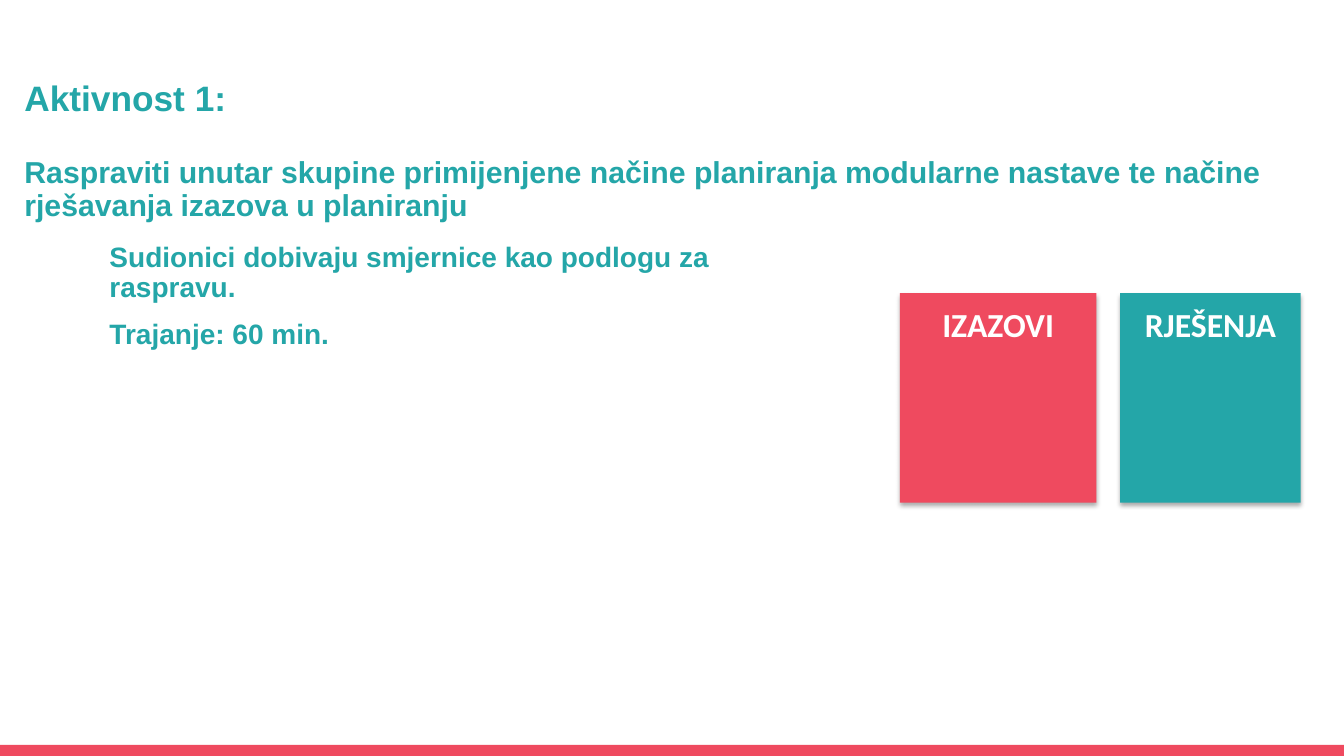
from lxml import etree
from pptx import Presentation
from pptx.dml.color import RGBColor
from pptx.enum.shapes import MSO_SHAPE
from pptx.enum.text import MSO_ANCHOR, MSO_AUTO_SIZE, PP_ALIGN
from pptx.oxml import parse_xml
from pptx.util import Cm, Pt

RECTANGLE = MSO_SHAPE.RECTANGLE
TOP = MSO_ANCHOR.TOP
NO_AUTOFIT = MSO_AUTO_SIZE.NONE
LEFT, CENTER = PP_ALIGN.LEFT, PP_ALIGN.CENTER

RED = RGBColor(0xEF, 0x4A, 0x5F)
TEAL = RGBColor(0x24, 0xA6, 0xA8)
WHITE = RGBColor(0xFF, 0xFF, 0xFF)

SOFT_SHADOW = (
    '<a:effectLst xmlns:a="http://schemas.openxmlformats.org/drawingml/2006/main">'
    '<a:outerShdw blurRad="44450" dist="27940" dir="5400000" algn="ctr" rotWithShape="0">'
    '<a:srgbClr val="000000"><a:alpha val="32000"/></a:srgbClr>'
    '</a:outerShdw></a:effectLst>'
)


def format_paragraph(paragraph, size, color, font_name="Arial", **layout):
    for name, value in layout.items():
        setattr(paragraph, name, value)
    font = paragraph.font
    font.name, font.size, font.bold = font_name, Pt(size), True
    font.color.rgb = color


def add_block(shapes, left, top, width, height, color):
    block = shapes.add_shape(RECTANGLE, Cm(left), Cm(top), Cm(width), Cm(height))
    block.shadow.inherit = False
    block.fill.solid()
    block.fill.fore_color.rgb = color
    block.line.fill.background()
    return block


prs = Presentation()
prs.slide_width, prs.slide_height = Cm(33.87), Cm(19.05)
slide = prs.slides.add_slide(prs.slide_layouts[5])

add_block(slide.shapes, 0, 18.77, 33.87, 0.28, RED)

# Title with the task below it
title = slide.shapes.title
title.left, title.top, title.width, title.height = Cm(0.36), Cm(0.66), Cm(31.95), Cm(7.49)
heading = title.text_frame
heading.text = (
    "Aktivnost 1:\n"
    "Raspraviti unutar skupine primijenjene načine planiranja modularne nastave "
    "te načine rješavanja izazova u planiranju"
)
heading.auto_size = NO_AUTOFIT
heading.vertical_anchor = TOP
heading.margin_top = Cm(1.37)
for paragraph, size, gap in zip(heading.paragraphs, (25.2, 21.6), (0, 28)):
    format_paragraph(paragraph, size, TEAL, alignment=LEFT, line_spacing=0.9,
                     space_before=Pt(gap), space_after=Pt(0))

# Guidelines and duration
details = slide.shapes.add_textbox(Cm(1.24), Cm(4.7), Cm(20.04), Cm(4.19)).text_frame
details.word_wrap = True
details.margin_top = Cm(1.42)
details.text = "Sudionici dobivaju smjernice kao podlogu za raspravu.\nTrajanje: 60 min."
for paragraph, gap in zip(details.paragraphs, (0, 6)):
    format_paragraph(paragraph, 20, TEAL, level=1, line_spacing=0.9,
                     space_before=Pt(gap), space_after=Pt(6))
    indents = paragraph._p.get_or_add_pPr()
    indents.set("marL", str(Cm(1.27)))
    indents.set("indent", "0")

# Challenge and solution cards
cards = slide.shapes.add_group_shape()
for label, left, width, color in (
    ("IZAZOVI", 22.68, 4.95, RED),
    ("RJEŠENJA", 28.23, 4.55, TEAL),
):
    card = add_block(cards.shapes, left, 7.39, width, 5.28, color)
    properties = card._element.spPr
    for effects in properties.findall("{*}effectLst"):
        properties.replace(effects, parse_xml(etree.fromstring(SOFT_SHADOW) is not None and SOFT_SHADOW))
    card_text = card.text_frame
    card_text.vertical_anchor = TOP
    card_text.margin_left = card_text.margin_right = 0
    card_text.text = label
    format_paragraph(card_text.paragraphs[0], 24, WHITE, "Calibri",
                     alignment=CENTER, line_spacing=1.15)

prs.save("out.pptx")
